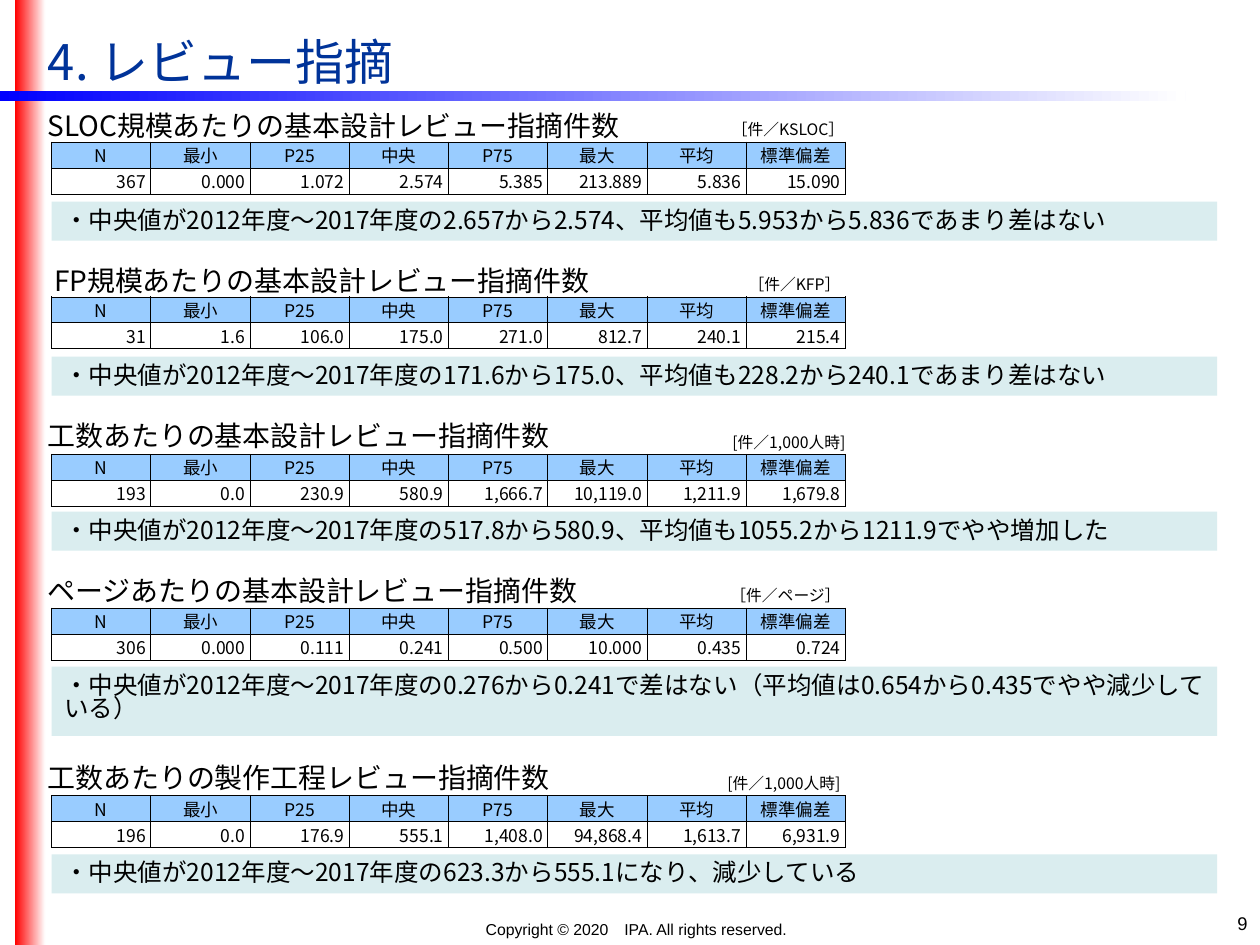
from dataclasses import dataclass

from lxml import etree
from pptx import Presentation
from pptx import util as u
from pptx.dml.color import RGBColor
from pptx.enum import shapes, text
from pptx.oxml.ns import qn

BLACK = RGBColor(0, 0, 0)
WHITE = RGBColor(255, 255, 255)
RED = RGBColor(255, 0, 0)
BLUE = RGBColor(0, 0, 255)
NAVY = RGBColor(0, 0x33, 0x99)
HEADER_BLUE = RGBColor(0x99, 0xCC, 0xFF)
NOTE_GREEN = RGBColor(0xDA, 0xED, 0xEF)
JAPANESE = "Noto Sans CJK JP"
ALIGN = text.PP_ALIGN
ANCHOR = text.MSO_ANCHOR
COLUMNS, ROWS = 1000, 750
SLIDE_WIDTH, SLIDE_HEIGHT = u.Inches(10), u.Inches(7.5)
HEADERS = ["N", "最小", "P25", "中央", "P75", "最大", "平均", "標準偏差"]


@dataclass
class Section:
    """One metric: its grid rows, wording and values."""
    top: float
    table_top: float
    heading: str
    unit: str
    values: str
    note: str
    note_rows: float = 31
    indent: float = 10
    unit_inset: float = 4


SECTIONS = [
    Section(85, 92, "SLOC規模あたりの基本設計レビュー指摘件数", "［件／KSLOC］",
            "367 0.000 1.072 2.574 5.385 213.889 5.836 15.090",
            "・中央値が2012年度～2017年度の2.657から2.574、平均値も5.953から5.836であまり差はない",
            unit_inset=1),
    Section(208, 215, "FP規模あたりの基本設計レビュー指摘件数", "［件／KFP］",
            "31 1.6 106.0 175.0 271.0 812.7 240.1 215.4",
            "・中央値が2012年度～2017年度の171.6から175.0、平均値も228.2から240.1であまり差はない",
            indent=15),
    Section(331, 340, "工数あたりの基本設計レビュー指摘件数", "[件／1,000人時]",
            "193 0.0 230.9 580.9 1,666.7 10,119.0 1,211.9 1,679.8",
            "・中央値が2012年度～2017年度の517.8から580.9、平均値も1055.2から1211.9でやや増加した",
            unit_inset=0),
    Section(454, 462, "ページあたりの基本設計レビュー指摘件数", "［件／ページ］",
            "306 0.000 0.111 0.241 0.500 10.000 0.435 0.724",
            "・中央値が2012年度～2017年度の0.276から0.241で差はない（平均値は0.654から0.435でやや減少している）",
            note_rows=55),
    Section(603, 611, "工数あたりの製作工程レビュー指摘件数", "[件／1,000人時]",
            "196 0.0 176.9 555.1 1,408.0 94,868.4 1,613.7 6,931.9",
            "・中央値が2012年度～2017年度の623.3から555.1になり、減少している"),
]


def across(columns):
    """Convert grid columns to a length."""
    return u.Emu(round(SLIDE_WIDTH * columns / COLUMNS))


def down(rows):
    """Convert grid rows to a length."""
    return u.Emu(round(SLIDE_HEIGHT * rows / ROWS))


def box(left, top, width, height):
    """Convert a box on the grid to slide lengths."""
    return across(left), down(top), across(width), down(height)


def write(frame, words, size, font=JAPANESE, color=BLACK, align=ALIGN.LEFT):
    """Put one formatted paragraph into a text frame."""
    frame.text = words
    paragraph = frame.paragraphs[0]
    paragraph.alignment = align
    for run in paragraph.runs:
        run.font.size = u.Pt(size)
        run.font.name = font
        run.font.color.rgb = color
        etree.SubElement(run.font._element, qn("a:ea"), typeface=font)
    return paragraph


def add_text(slide, area, words, size, **style):
    """Add a wrapping text box."""
    frame = slide.shapes.add_textbox(*area).text_frame
    frame.word_wrap = True
    write(frame, words, size, **style)
    return frame


def add_bar(slide, area, color):
    """Add a rectangle that fades to white from left to right."""
    bar = slide.shapes.add_shape(shapes.MSO_SHAPE.RECTANGLE, *area)
    bar.shadow.inherit = False
    bar.line.fill.background()
    bar.fill.gradient()
    bar.fill.gradient_angle = 0
    for stop, shade in zip(bar.fill.gradient_stops, (color, WHITE)):
        stop.color.rgb = shade


def add_title(slide, area):
    """Place and format the title placeholder."""
    title = slide.shapes.title
    title.left, title.top, title.width, title.height = area
    title.text_frame.vertical_anchor = ANCHOR.MIDDLE
    write(title.text_frame, "4. レビュー指摘", 28, color=NAVY)


def set_borders(cell, visible):
    """Draw thin black lines on the named sides and clear the others."""
    properties = cell._tc.get_or_add_tcPr()
    for side in "LRTB":
        line = etree.SubElement(properties, qn(f"a:ln{side}"), w=str(u.Pt(0.5)))
        if side in visible:
            fill = etree.SubElement(line, qn("a:solidFill"))
            etree.SubElement(fill, qn("a:srgbClr"), val=str(BLACK))
        else:
            etree.SubElement(line, qn("a:noFill"))


def fill_cell(cell, words, size, align, fill, visible, inset=4):
    """Format one table cell and write its words."""
    set_borders(cell, visible)
    cell.fill.solid()
    cell.fill.fore_color.rgb = fill
    cell.vertical_anchor = ANCHOR.MIDDLE
    cell.margin_left, cell.margin_right = across(4), across(inset)
    cell.margin_top = cell.margin_bottom = 0
    paragraph = write(cell.text_frame, words, size, align=align)
    if not words:
        etree.SubElement(paragraph._p, qn("a:endParaRPr"), sz=str(size * 100))


def add_statistics(slide, area, section):
    """Add the unit row, header row and value row of one metric."""
    table = slide.shapes.add_table(3, len(HEADERS), *area).table
    table.first_row = table.horz_banding = False
    for row in table.rows:
        row.height = u.Emu(area[3] // 3)
    table.cell(0, 6).merge(table.cell(0, 7))
    for column, (header, value) in enumerate(zip(HEADERS, section.values.split())):
        unit = section.unit if column == 6 else ""
        fill_cell(table.cell(0, column), unit, 9, ALIGN.RIGHT, WHITE, "B", section.unit_inset)
        fill_cell(table.cell(1, column), header, 10, ALIGN.CENTER, HEADER_BLUE, "LRTB")
        fill_cell(table.cell(2, column), value, 10, ALIGN.RIGHT, WHITE, "LRTB")


def add_note(slide, area, words):
    """Add the shaded comment below a table."""
    note = slide.shapes.add_shape(shapes.MSO_SHAPE.RECTANGLE, *area)
    note.shadow.inherit = False
    note.line.fill.background()
    note.fill.solid()
    note.fill.fore_color.rgb = NOTE_GREEN
    frame = note.text_frame
    frame.word_wrap = True
    frame.vertical_anchor = ANCHOR.TOP
    frame.margin_top, frame.margin_bottom = down(7), 0
    write(frame, words, 14).line_spacing = 0.8


def add_section(slide, left, section):
    """Place heading, table and comment of one metric."""
    add_statistics(slide, box(left + 13, section.table_top, 630, 62), section)
    heading = add_text(slide, box(left, section.top, 504, 37), section.heading, 16)
    heading.margin_left = across(section.indent)
    heading.margin_top = down(1)
    add_note(slide, box(left + 13, section.top + 75, 925, section.note_rows), section.note)


def add_footer(slide):
    """Add the copyright line and the page number."""
    add_text(slide, box(202, 725, 606, 25), "Copyright © 2020　IPA. All rights reserved.", 9,
             font="Arial", align=ALIGN.CENTER)
    add_text(slide, box(767, 719, 233, 31), "9", 10.5, font="Arial", align=ALIGN.RIGHT)


def main():
    """Build the slide and save it."""
    presentation = Presentation()
    presentation.slide_width, presentation.slide_height = SLIDE_WIDTH, SLIDE_HEIGHT
    slide = presentation.slides.add_slide(presentation.slide_layouts[5])
    add_bar(slide, box(12, 0, 24, ROWS), RED)
    add_bar(slide, box(0, 72, 941, 8), BLUE)
    add_title(slide, box(28, 17, 913, 63))
    for section in SECTIONS:
        add_section(slide, 28, section)
    add_footer(slide)
    presentation.save("out.pptx")


if __name__ == "__main__":
    main()
